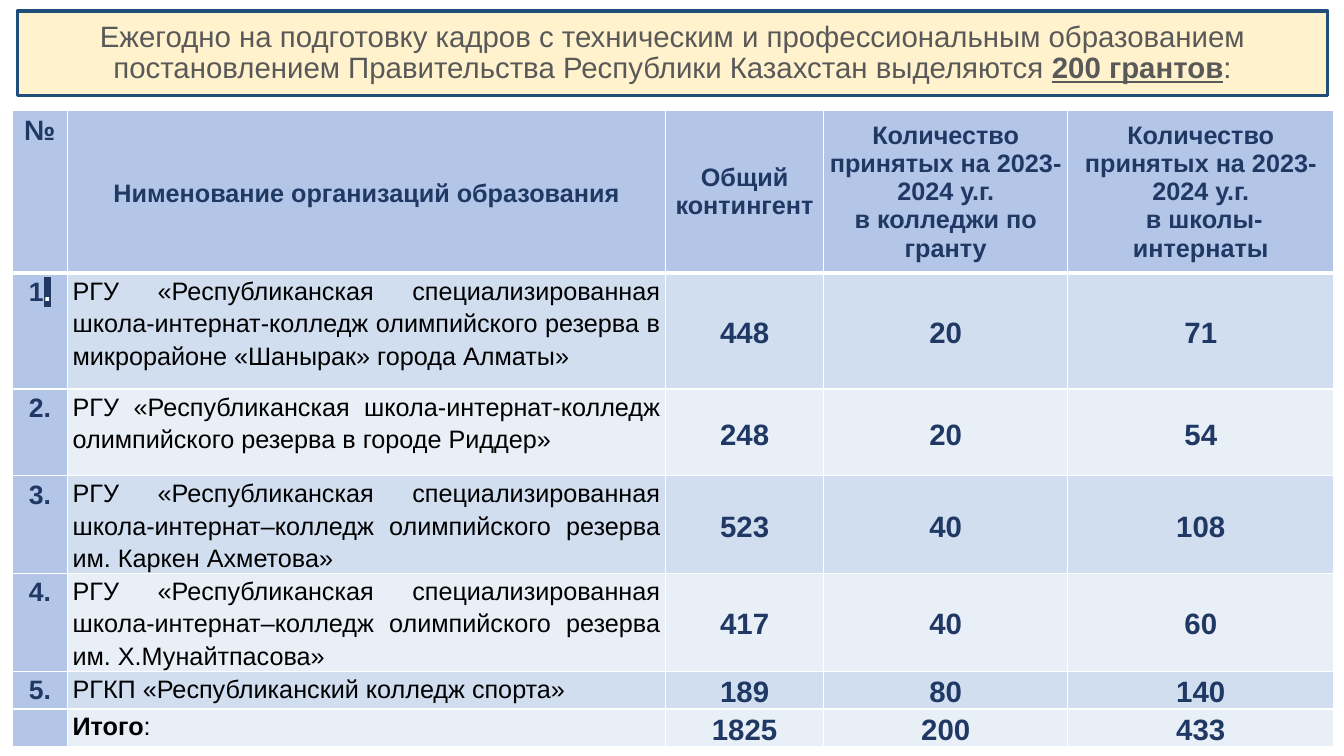
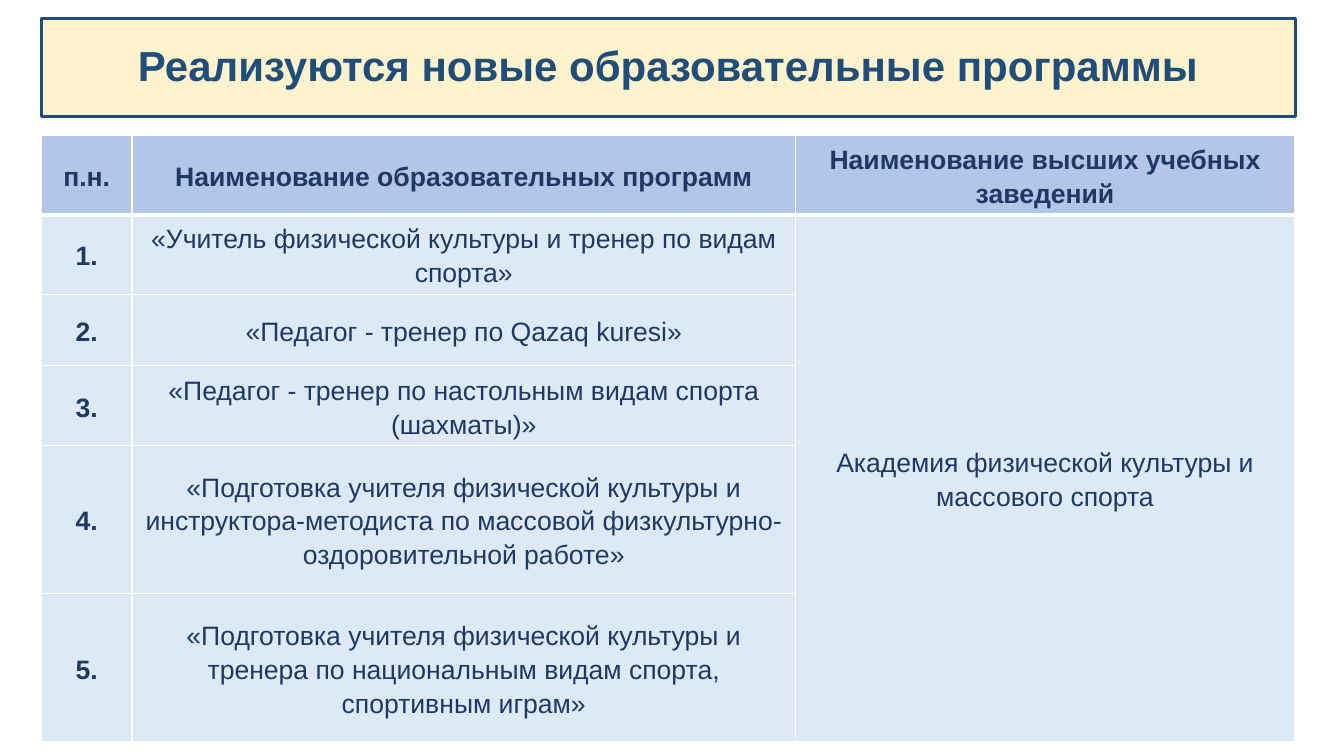
from lxml.etree import SubElement
from pptx import Presentation
from pptx.dml.color import RGBColor
from pptx.enum.shapes import MSO_SHAPE
from pptx.enum.text import MSO_ANCHOR, PP_ALIGN
from pptx.oxml.ns import qn
from pptx.util import Inches, Pt

FONT = "Arial"
CREAM = RGBColor(0xFF, 0xF2, 0xCC)
BLUE = RGBColor(0x1E, 0x4E, 0x79)
NAVY = RGBColor(0x20, 0x38, 0x64)
GREY = RGBColor(0x59, 0x59, 0x59)
BLACK = RGBColor(0x00, 0x00, 0x00)
WHITE = RGBColor(0xFF, 0xFF, 0xFF)
HEAD = RGBColor(0xB3, 0xC6, 0xE7)
BANDS = [RGBColor(0xD0, 0xDE, 0xEF), RGBColor(0xE9, 0xEF, 0xF7)]
PALE = RGBColor(0xDD, 0xEA, 0xF6)

GRANT_COLS = [0.55, 5.93, 1.57, 2.42, 2.64]
GRANT_ROWS = [1.61, 1.15, 0.86, 0.97, 0.97, 0.37, 0.37]
INTAKE = "Количество принятых на 2023-2024 у.г."
GRANT_HEADS = [
    ["Общий контингент"],
    [INTAKE, "в колледжи по гранту"],
    [INTAKE, " в школы-интернаты"],
]
SCHOOLS = [
    ("РГУ «Республиканская специализированная школа-интернат-колледж "
     "олимпийского резерва в микрорайоне «Шанырак» города Алматы»", 448, 20, 71),
    ("РГУ «Республиканская школа-интернат-колледж "
     "олимпийского резерва в городе Риддер»", 248, 20, 54),
    ("РГУ «Республиканская специализированная школа-интернат–колледж "
     "олимпийского резерва им. Каркен Ахметова»", 523, 40, 108),
    ("РГУ «Республиканская специализированная школа-интернат–колледж "
     "олимпийского резерва им. Х.Мунайтпасова»", 417, 40, 60),
    ("РГКП «Республиканский колледж спорта»", 189, 80, 140),
    ("Итого", 1825, 200, 433),
]

COURSE_COLS = [0.9, 6.58, 4.95]
COURSE_ROWS = [0.79, 0.79, 0.71, 0.79, 1.47, 1.47]
COURSE_HEADS = ["п.н.", "Наименование образовательных программ",
                "Наименование высших учебных заведений"]
COURSES = [
    "«Учитель физической культуры и тренер по видам спорта»",
    "«Педагог - тренер по Qazaq kuresi»",
    "«Педагог - тренер по настольным видам спорта (шахматы)»",
    "«Подготовка учителя физической культуры и инструктора-методиста "
    "по массовой физкультурно-оздоровительной работе»",
    "«Подготовка учителя физической культуры и тренера "
    "по национальным видам спорта, спортивным играм»",
]


def add_run(par, text, size, color=NAVY, bold=False, under=False):
    run = par.add_run()
    run.text = text
    font = run.font
    font.name = FONT
    font.size = Pt(size)
    font.bold = bold
    font.underline = under
    font.color.rgb = color
    return run


def mark_run(run, color):
    props = run.font._element
    mark = SubElement(props, qn("a:highlight"))
    SubElement(mark, qn("a:srgbClr"), val=str(color))
    props.find(qn("a:solidFill")).addnext(mark)


def add_title(slide, left, top, width, height):
    box = slide.shapes.add_shape(MSO_SHAPE.RECTANGLE, Inches(left), Inches(top),
                                 Inches(width), Inches(height))
    box.shadow.inherit = False
    box.fill.solid()
    box.fill.fore_color.rgb = CREAM
    box.line.color.rgb = BLUE
    box.line.width = Pt(2.25)
    frame = box.text_frame
    frame.word_wrap = True
    frame.vertical_anchor = MSO_ANCHOR.MIDDLE
    par = frame.paragraphs[0]
    par.alignment = PP_ALIGN.CENTER
    par.line_spacing = 0.9
    return par


def add_grid(slide, left, top, cols, rows, inset):
    frame = slide.shapes.add_table(len(rows), len(cols), Inches(left), Inches(top),
                                   Inches(sum(cols)), Inches(sum(rows)))
    table = frame.table
    table.first_row = table.horz_banding = False
    for col, width in zip(table.columns, cols):
        col.width = Inches(width)
    for row, height in zip(table.rows, rows):
        row.height = Inches(height)
    for cell in table.iter_cells():
        cell.margin_left = cell.margin_right = Inches(inset)
        cell.margin_top = cell.margin_bottom = 0
    return table


def paint_cell(table, row, col, color):
    cell = table.cell(row, col)
    cell.fill.solid()
    cell.fill.fore_color.rgb = color
    props = cell._tc.get_or_add_tcPr()
    edges = {"L": 1, "R": 1, "T": 3 if row == 1 else 1, "B": 3 if row == 0 else 1}
    for spot, (side, width) in enumerate(edges.items()):
        line = SubElement(props, qn(f"a:ln{side}"), w=str(Pt(width)))
        fill = SubElement(line, qn("a:solidFill"))
        SubElement(fill, qn("a:srgbClr"), val=str(WHITE))
        props.insert(spot, line)


def set_cell(cell, lines, size, color=NAVY, bold=False, align=PP_ALIGN.CENTER,
             anchor=MSO_ANCHOR.MIDDLE, pitch=1.15):
    cell.vertical_anchor = anchor
    frame = cell.text_frame
    for index, line in enumerate(lines):
        par = frame.add_paragraph() if index else frame.paragraphs[0]
        par.alignment = align
        par.line_spacing = pitch
        add_run(par, line, size, color, bold)
    return par


def grant_slide(deck):
    slide = deck.slides.add_slide(deck.slide_layouts[6])
    title = add_title(slide, 0.17, 0.11, 13, 0.84)
    add_run(title, "Ежегодно на подготовку кадров с техническим и профессиональным "
            "образованием постановлением Правительства Республики Казахстан "
            "выделяются ", 21, GREY)
    add_run(title, "200 грантов", 21, GREY, True, True)
    add_run(title, ":", 21, GREY)

    table = add_grid(slide, 0.12, 1.1, GRANT_COLS, GRANT_ROWS, 0.05)
    for row in range(len(GRANT_ROWS)):
        for col in range(len(GRANT_COLS)):
            color = HEAD if row == 0 or col == 0 else BANDS[(row - 1) % 2]
            paint_cell(table, row, col, color)

    set_cell(table.cell(0, 0), ["№"], 20, bold=True, anchor=MSO_ANCHOR.TOP)
    set_cell(table.cell(0, 1), ["Нименование организаций образования"], 18, bold=True)
    for col, lines in enumerate(GRANT_HEADS, 2):
        set_cell(table.cell(0, col), lines, 18, bold=True, pitch=1.0)

    last = len(SCHOOLS)
    for row, (name, *counts) in enumerate(SCHOOLS, 1):
        if row < last:
            par = set_cell(table.cell(row, 0), [str(row)], 19, bold=True,
                           anchor=MSO_ANCHOR.TOP)
            dot = add_run(par, ".", 19, WHITE if row == 1 else NAVY, True)
            if row == 1:
                mark_run(dot, NAVY)
        par = set_cell(table.cell(row, 1), [name], 18, BLACK, row == last,
                       PP_ALIGN.JUSTIFY, MSO_ANCHOR.TOP)
        if row == last:
            add_run(par, ":", 18, BLACK)
        for col, count in enumerate(counts, 2):
            set_cell(table.cell(row, col), [str(count)], 21, bold=True)


def course_slide(deck):
    slide = deck.slides.add_slide(deck.slide_layouts[6])
    title = add_title(slide, 0.41, 0.18, 12.44, 0.98)
    add_run(title, "Реализуются новые образовательные программы", 30, BLUE, True)

    table = add_grid(slide, 0.41, 1.34, COURSE_COLS, COURSE_ROWS, 0.07)
    for row in range(len(COURSE_ROWS)):
        for col in range(len(COURSE_COLS)):
            paint_cell(table, row, col, PALE if row else HEAD)
    for col, head in enumerate(COURSE_HEADS):
        set_cell(table.cell(0, col), [head], 19, bold=True)
    for row, name in enumerate(COURSES, 1):
        set_cell(table.cell(row, 0), [f"{row}."], 19, bold=True)
        set_cell(table.cell(row, 1), [name], 19)
    school = table.cell(1, 2)
    school.merge(table.cell(len(COURSES), 2))
    par = set_cell(school, ["Академия физической культуры и массового спорта"], 19)
    par.space_before = Pt(10)


def main():
    deck = Presentation()
    deck.slide_width = Inches(13.33)
    deck.slide_height = Inches(7.5)
    grant_slide(deck)
    course_slide(deck)
    deck.save("out.pptx")


if __name__ == "__main__":
    main()
